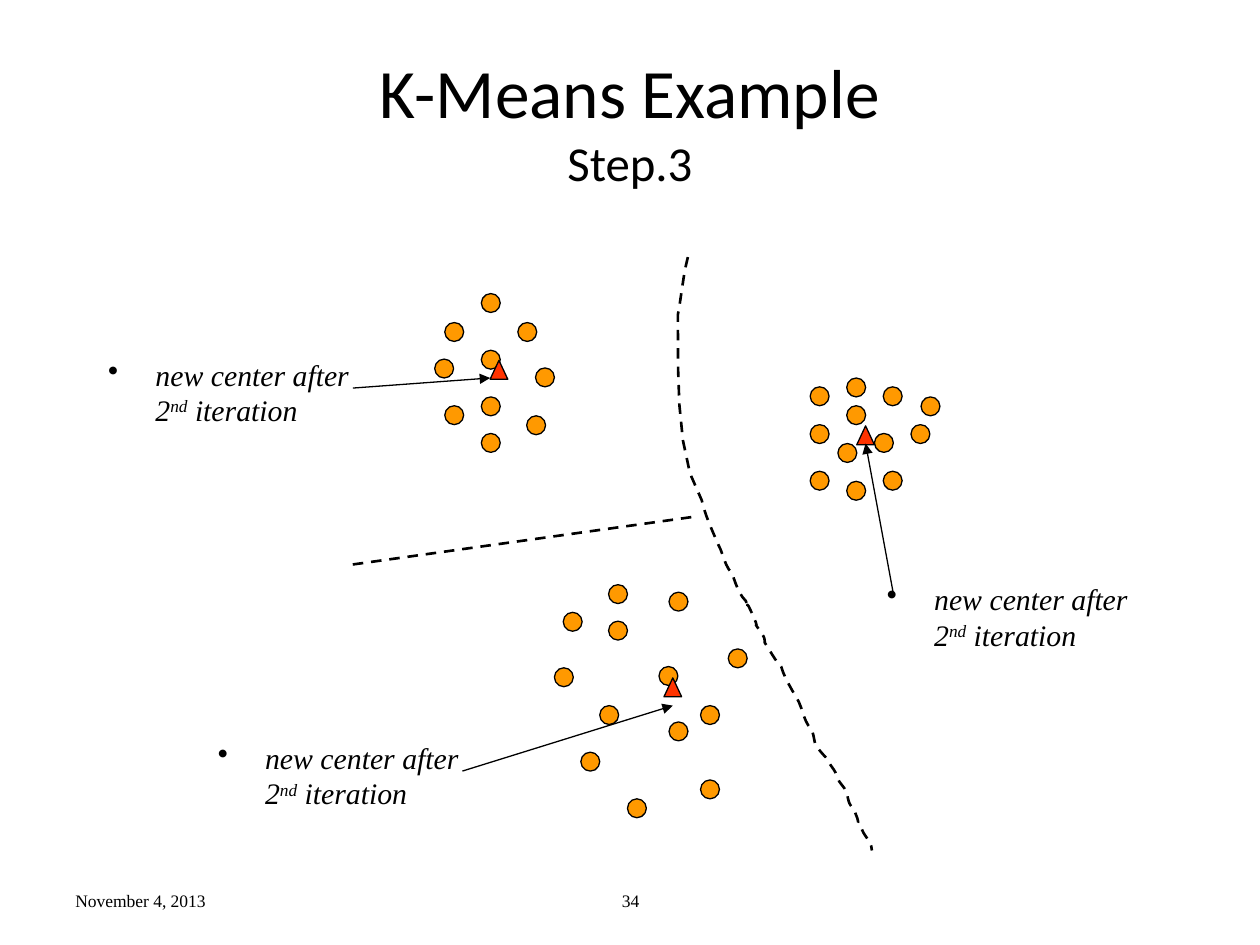
from typing import NamedTuple

import pptx
import pptx.dml.color
import pptx.enum.dml
import pptx.enum.shapes
import pptx.enum.text
import pptx.oxml
import pptx.oxml.ns
import pptx.shapes.connector
import pptx.slide
import pptx.text.text
import pptx.util

Inches = pptx.util.Inches
Pt = pptx.util.Pt
Shape = pptx.enum.shapes.MSO_SHAPE
Align = pptx.enum.text.PP_ALIGN
RGBColor = pptx.dml.color.RGBColor
Slide = pptx.slide.Slide
Point = tuple[float, float]

BLACK = RGBColor(0x00, 0x00, 0x00)
ORANGE = RGBColor(0xFF, 0x99, 0x00)
RED = RGBColor(0xFF, 0x33, 0x00)
SANS = "Calibri"
SERIF = "Times New Roman"
DOT = 0.15
STEPS = 6


class Cluster(NamedTuple):
    """Left top corners of dots, center and note, and the ends of the arrow."""
    dots: list[Point]
    center: Point
    note: Point
    start: Point
    end: Point


CLUSTERS = [
    Cluster(
        [(3.82, 2.33), (3.53, 2.56), (4.11, 2.56), (3.82, 2.78), (3.45, 2.85),
         (4.25, 2.92), (3.82, 3.15), (3.82, 3.44), (3.53, 3.22), (4.18, 3.3)],
        (3.89, 2.86), (0.76, 2.78), (2.8, 3.08), (3.89, 3)),
    Cluster(
        [(6.72, 3), (6.43, 3.07), (7.01, 3.07), (6.72, 3.22), (6.43, 3.37),
         (6.65, 3.52), (6.43, 3.74), (6.72, 3.82), (7.31, 3.15), (6.94, 3.44),
         (7.23, 3.37), (7.01, 3.74)],
        (6.8, 3.38), (6.94, 4.56), (7.09, 4.71), (6.87, 3.52)),
    Cluster(
        [(4.83, 4.64), (5.31, 4.7), (4.83, 4.93), (4.47, 4.86), (4.4, 5.3),
         (5.23, 5.29), (5.78, 5.15), (4.76, 5.6), (5.56, 5.6), (5.31, 5.73),
         (4.61, 5.97), (4.98, 6.34), (5.56, 6.19)],
        (5.27, 5.38), (1.63, 5.82), (3.67, 6.12), (5.34, 5.6)),
]

# Start of the border, then two handles and an end for each cubic curve.
BORDER = [
    (5.46, 2.04),
    (5.42, 2.19), (5.41, 2.35), (5.38, 2.5),
    (5.39, 2.8), (5.34, 3.61), (5.57, 3.97),
    (5.6, 4.1), (5.65, 4.2), (5.7, 4.32),
    (5.74, 4.39), (5.75, 4.49), (5.81, 4.55),
    (5.84, 4.63), (5.86, 4.71), (5.92, 4.77),
    (5.97, 4.93), (5.89, 4.69), (5.97, 4.87),
    (6.06, 5.07), (5.93, 4.85), (6.06, 5.05),
    (6.07, 5.07), (6.07, 5.09), (6.07, 5.1),
    (6.11, 5.16), (6.15, 5.24), (6.2, 5.29),
    (6.23, 5.39), (6.29, 5.48), (6.34, 5.57),
    (6.38, 5.66), (6.38, 5.72), (6.44, 5.79),
    (6.46, 5.83), (6.46, 5.87), (6.47, 5.9),
    (6.5, 5.96), (6.53, 5.98), (6.57, 6.03),
    (6.59, 6.08), (6.62, 6.1), (6.64, 6.15),
    (6.65, 6.17), (6.65, 6.18), (6.66, 6.2),
    (6.68, 6.23), (6.71, 6.26), (6.72, 6.29),
    (6.73, 6.32), (6.73, 6.36), (6.75, 6.39),
    (6.76, 6.4), (6.77, 6.42), (6.78, 6.43),
    (6.85, 6.6), (6.77, 6.47), (6.84, 6.58),
    (6.86, 6.64), (6.92, 6.68), (6.92, 6.75),
]


def style(font: pptx.text.text.Font, name: str, size: float) -> None:
    font.name, font.size = name, Pt(size)
    font.color.rgb = BLACK


def add_text(slide: Slide, spot: Point, width: float, height: float,
             text: str) -> pptx.text.text.TextFrame:
    box = slide.shapes.add_textbox(*map(Inches, (*spot, width, height)))
    frame = box.text_frame
    frame.word_wrap = True
    frame.text = text
    return frame


def add_label(slide: Slide, spot: Point, width: float, height: float,
              lines: list[tuple[str, str, float]], align: Align) -> None:
    """Add middle-anchored lines, each a text, a font and a size."""
    frame = add_text(slide, spot, width, height,
                     "\n".join(line[0] for line in lines))
    frame.vertical_anchor = pptx.enum.text.MSO_ANCHOR.MIDDLE
    for para, (_, name, size) in zip(frame.paragraphs, lines):
        para.alignment = align
        style(para.runs[0].font, name, size)


def add_note(slide: Slide, spot: Point) -> None:
    """Add a bulleted note with a raised ordinal ending."""
    para = add_text(slide, spot, 2.29, 0.67, "new center after 2").paragraphs[0]
    for text in ("nd", " iteration"):
        para.add_run().text = text
    for run in para.runs:
        style(run.font, SERIF, 17)
        run.font.italic = True
    para.runs[1]._r.get_or_add_rPr().set("baseline", "30000")
    props = para._p.get_or_add_pPr()
    props.set("marL", str(Inches(0.375)))
    props.set("indent", str(-Inches(0.375)))
    bullet = pptx.oxml.parse_xml(
        f'<a:buChar {pptx.oxml.ns.nsdecls("a")} char="•"/>')
    props.append(bullet)


def add_mark(slide: Slide, kind: Shape, spot: Point, width: float,
             color: RGBColor) -> None:
    mark = slide.shapes.add_shape(kind, *map(Inches, (*spot, width, DOT)))
    mark.shadow.inherit = False
    mark.fill.solid()
    mark.fill.fore_color.rgb = color
    mark.line.color.rgb = BLACK
    mark.line.width = Pt(0.75)


def add_line(slide: Slide, start: Point, end: Point,
             width: float) -> pptx.shapes.connector.Connector:
    line = slide.shapes.add_connector(
        pptx.enum.shapes.MSO_CONNECTOR.STRAIGHT, *map(Inches, start + end))
    line.line.color.rgb = BLACK
    line.line.width = Pt(width)
    line._element.spPr.append(pptx.oxml.parse_xml(
        f'<a:effectLst {pptx.oxml.ns.nsdecls("a")}/>'))
    return line


def add_arrow(slide: Slide, start: Point, end: Point) -> None:
    arrow = add_line(slide, start, end, 0.75)
    arrow.line._get_or_add_ln().append(pptx.oxml.parse_xml(
        f'<a:tailEnd {pptx.oxml.ns.nsdecls("a")} type="triangle"/>'))


def bend(curve: list[Point], t: float) -> Point:
    """Return the point at t, from 0 to 1, on a cubic curve."""
    parts = ((1 - t) ** 3, 3 * t * (1 - t) ** 2, 3 * t * t * (1 - t), t ** 3)
    return tuple(sum(k * v for k, v in zip(parts, axis)) for axis in zip(*curve))


def add_border(slide: Slide, points: list[Point]) -> None:
    """Add a dashed open outline through a chain of cubic curves."""
    trace = [tuple(map(Inches, bend(points[i:i + 4], step / STEPS)))
             for i in range(0, len(points) - 1, 3)
             for step in range(1, STEPS + 1)]
    build = slide.shapes.build_freeform(*map(Inches, points[0]))
    build.add_line_segments(trace, close=False)
    border = build.convert_to_shape()
    border.shadow.inherit = False
    border.fill.background()
    border.line.color.rgb = BLACK
    border.line.width = Pt(1.5)
    border.line.dash_style = pptx.enum.dml.MSO_LINE.DASH


def main() -> None:
    deck = pptx.Presentation()
    deck.slide_width, deck.slide_height = Inches(10), Inches(7.5)
    slide = deck.slides.add_slide(deck.slide_layouts[6])

    add_label(slide, (0.5, 0.33), 9, 1.25,
              [("K-Means Example", SANS, 39.6), ("Step.3", SANS, 27.9)],
              Align.CENTER)
    add_label(slide, (0.5, 6.95), 2.33, 0.4,
              [("November 4, 2013", SERIF, 10)], Align.LEFT)
    add_label(slide, (3.42, 6.95), 3.17, 0.4, [("34", SERIF, 10)], Align.CENTER)

    split = add_line(slide, (2.8, 4.48), (5.52, 4.1), 1.5)
    split.line.dash_style = pptx.enum.dml.MSO_LINE.DASH
    add_border(slide, BORDER)

    for group in CLUSTERS:
        for dot in group.dots:
            add_mark(slide, Shape.FLOWCHART_CONNECTOR, dot, DOT, ORANGE)
        add_note(slide, group.note)
        add_mark(slide, Shape.ISOSCELES_TRIANGLE, group.center, 0.14, RED)
        add_arrow(slide, group.start, group.end)
    deck.save("out.pptx")


if __name__ == "__main__":
    main()
